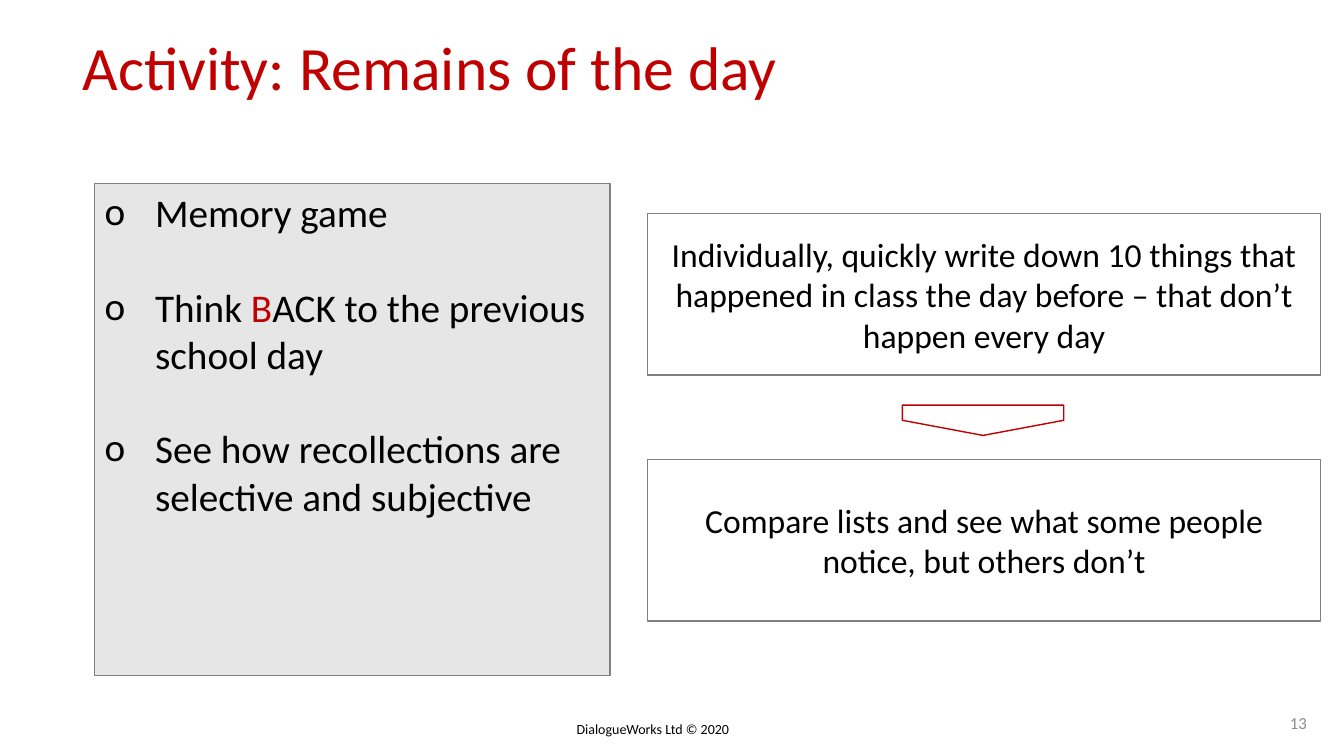
import dataclasses

import pptx
import pptx.dml.color
import pptx.enum.shapes
import pptx.enum.text
import pptx.oxml
import pptx.oxml.ns
import pptx.util

Inches = pptx.util.Inches
Pt = pptx.util.Pt
Align = pptx.enum.text.PP_ALIGN
Anchor = pptx.enum.text.MSO_ANCHOR
Preset = pptx.enum.shapes.MSO_SHAPE

FONT = "Calibri"
RED, BLACK, GRAY, PALE, MUTED = "C00000", "000000", "808080", "E7E6E6", "8C8C8C"


@dataclasses.dataclass
class Span:
    text: str
    color: str = BLACK


@dataclasses.dataclass
class Label:
    box: tuple[float, float, float, float]
    span: Span
    size: float
    align: Align = Align.LEFT
    anchor: Anchor = Anchor.TOP
    wrap: bool = True
    line_spacing: float = 1.0


@dataclasses.dataclass
class Outline:
    box: tuple[float, float, float, float]
    line: str = GRAY
    fill: str | None = None
    preset: Preset = Preset.RECTANGLE
    rotation: float = 0


def rgb(code: str) -> pptx.dml.color.RGBColor:
    return pptx.dml.color.RGBColor.from_string(code)


def add_span(paragraph, span: Span, size: float) -> None:
    run = paragraph.add_run()
    run.text = span.text
    run.font.name = FONT
    run.font.size = Pt(size)
    run.font.color.rgb = rgb(span.color)


def draw_label(slide, label: Label) -> None:
    frame = slide.shapes.add_textbox(*map(Inches, label.box)).text_frame
    frame.word_wrap = label.wrap
    frame.vertical_anchor = label.anchor
    paragraph = frame.paragraphs[0]
    paragraph.alignment = label.align
    paragraph.line_spacing = label.line_spacing
    add_span(paragraph, label.span, label.size)


def draw_outline(slide, outline: Outline):
    shape = slide.shapes.add_shape(outline.preset, *map(Inches, outline.box))
    shape.shadow.inherit = False
    shape.rotation = outline.rotation
    if outline.fill:
        shape.fill.solid()
        shape.fill.fore_color.rgb = rgb(outline.fill)
    else:
        shape.fill.background()
    shape.line.color.rgb = rgb(outline.line)
    shape.line.width = Pt(1)
    return shape


def set_bullet(paragraph, symbol: str, indent: float) -> None:
    props = paragraph._p.get_or_add_pPr()
    props.set("marL", str(Inches(indent)))
    props.set("indent", str(-Inches(indent)))
    for tag, key, value in (("a:buFont", "typeface", FONT), ("a:buChar", "char", symbol)):
        element = pptx.oxml.parse_xml(f"<{tag} {pptx.oxml.ns.nsdecls('a')}/>")
        element.set(key, value)
        props.append(element)


def draw_points(slide, outline: Outline, points: list[list[Span]]) -> None:
    frame = draw_outline(slide, outline).text_frame
    frame.word_wrap = True
    frame.vertical_anchor = Anchor.TOP
    for index, spans in enumerate(points):
        paragraph = frame.add_paragraph() if index else frame.paragraphs[0]
        set_bullet(paragraph, "o", 0.5)
        paragraph.alignment = Align.LEFT
        if index:
            paragraph.space_before = Pt(34)
        for span in spans:
            add_span(paragraph, span, 28)


def draw_step(slide, top: float, text: str) -> None:
    frame = draw_outline(slide, Outline((6.42, top, 6.68, 1.6))).text_frame
    frame.word_wrap = True
    frame.vertical_anchor = Anchor.MIDDLE
    frame.paragraphs[0].alignment = Align.CENTER
    add_span(frame.paragraphs[0], Span(text), 24)


LABELS = [
    Label((5.62, 7.1, 1.75, 0.27), Span("DialogueWorks Ltd © 2020"), 10, wrap=False),
    Label((12.55, 6.97, 0.51, 0.4), Span("13", MUTED), 12, Align.RIGHT, Anchor.MIDDLE),
    Label((0.72, 0.32, 9.79, 1.06), Span("Activity: Remains of the day", RED), 44,
          line_spacing=0.9),
]
POINTS = [
    [Span("Memory game")],
    [Span("Think "), Span("B", RED), Span("ACK to the previous school day")],
    [Span("See how recollections are selective and subjective")],
]
STEPS = {
    2.12: "Individually, quickly write down 10 things that happened in class "
          "the day before – that don’t happen every day",
    4.56: "Compare lists and see what some people notice, but others don’t",
}


def main() -> None:
    deck = pptx.Presentation()
    deck.slide_width, deck.slide_height = Inches(13.33), Inches(7.5)
    slide = deck.slides.add_slide(deck.slide_layouts[6])

    # Footer, page number and title
    for label in LABELS:
        draw_label(slide, label)

    # Summary panel
    draw_points(slide, Outline((0.94, 1.82, 5.11, 4.88), fill=PALE), POINTS)

    # Two steps joined by a downward marker
    for top, text in STEPS.items():
        draw_step(slide, top, text)
    draw_outline(slide, Outline((9.6, 3.37, 0.3, 1.6), RED, preset=Preset.PENTAGON, rotation=90))

    deck.save("out.pptx")


if __name__ == "__main__":
    main()
